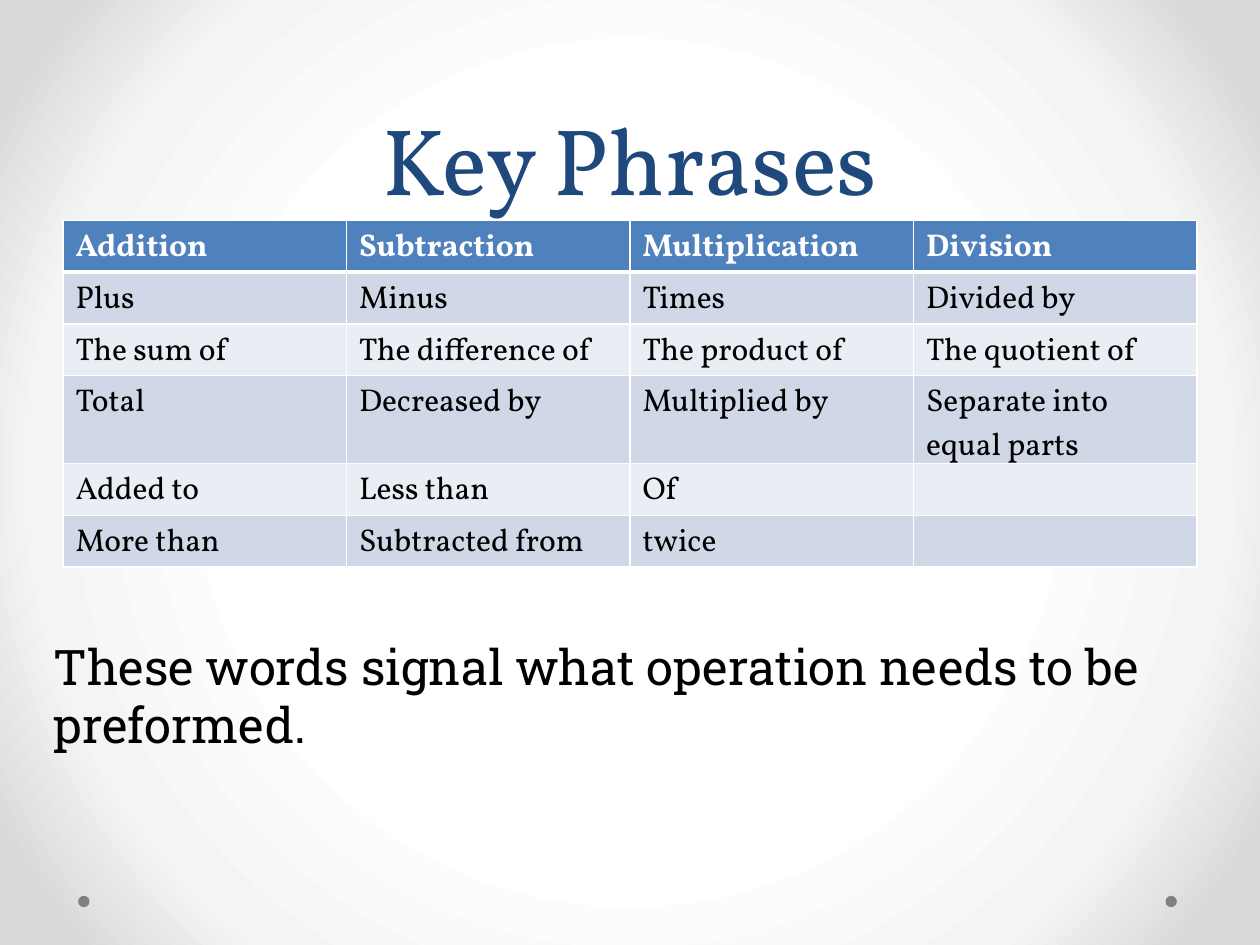
from pptx import Presentation
from pptx.dml.color import RGBColor
from pptx.enum.shapes import MSO_SHAPE
from pptx.enum.text import MSO_ANCHOR, PP_ALIGN
from pptx.oxml import parse_xml
from pptx.oxml.ns import nsdecls
from pptx.util import Inches, Pt

OVAL = MSO_SHAPE.OVAL
BOTTOM, TOP = MSO_ANCHOR.BOTTOM, MSO_ANCHOR.TOP
LEFT, CENTER = PP_ALIGN.LEFT, PP_ALIGN.CENTER

NAVY = RGBColor(0x1F, 0x49, 0x7D)
BLUE = RGBColor(0x4F, 0x81, 0xBD)
BANDS = RGBColor(0xD0, 0xD8, 0xE8), RGBColor(0xE9, 0xED, 0xF4)
WHITE = RGBColor(0xFF, 0xFF, 0xFF)
BLACK = RGBColor(0, 0, 0)
GRAY = RGBColor(0x80, 0x80, 0x80)

SERIF, SLAB = "Vollkorn", "Roboto Slab"

# Content
TITLE = "Key Phrases"
NOTE = "These words signal what operation needs to be preformed."
ROWS = [
    ("Addition", "Subtraction", "Multiplication", "Division"),
    ("Plus", "Minus", "Times", "Divided by"),
    ("The sum of", "The difference of", "The product of", "The quotient of"),
    ("Total", "Decreased by", "Multiplied by", "Separate into equal parts"),
    ("Added to", "Less than", "Of", ""),
    ("More than", "Subtracted from", "twice", ""),
]
STOPS = [(50, WHITE), (76, RGBColor(0xF4, 0xF4, 0xF4)),
         (92, RGBColor(0xDA, 0xDA, 0xDA))]
DOTS = (0.62, 9.25)
COL_W, ROW_H = 2.25, 0.455


def set_font(par, name, size, color, bold=False):
    font = par.font
    font.name, font.size, font.bold = name, Pt(size), bold
    font.color.rgb = color


def add_text(slide, text, box, name, size, color, anchor=TOP, align=LEFT):
    frame = slide.shapes.add_textbox(*map(Inches, box)).text_frame
    frame.word_wrap = True
    frame.vertical_anchor = anchor
    par = frame.paragraphs[0]
    par.text, par.alignment = text, align
    set_font(par, name, size, color)
    return par


def add_edge(cell, side, width):
    cell._tc.get_or_add_tcPr().append(parse_xml(
        f'<a:ln{side} {nsdecls("a")} w="{Pt(width)}"><a:solidFill>'
        f'<a:srgbClr val="{WHITE}"/></a:solidFill></a:ln{side}>'))


def add_glow(slide):
    stops = "".join(
        f'<a:gs pos="{pos * 1000}"><a:srgbClr val="{color}"/></a:gs>'
        for pos, color in STOPS)
    slide.element.cSld.insert(0, parse_xml(
        f'<p:bg {nsdecls("p", "a")}><p:bgPr><a:gradFill rotWithShape="1">'
        f'<a:gsLst>{stops}</a:gsLst><a:path path="circle">'
        '<a:fillToRect l="50000" t="50000" r="50000" b="50000"/></a:path>'
        '</a:gradFill><a:effectLst/></p:bgPr></p:bg>'))


def add_grid(slide):
    rows, cols = len(ROWS), len(ROWS[0])
    table = slide.shapes.add_table(
        rows, cols, Inches(0.5), Inches(1.75),
        Inches(cols * COL_W), Inches(rows * 0.41)).table
    for r, words in enumerate(ROWS):
        table.rows[r].height = Inches(0.41)
        head = r == 0
        for c, word in enumerate(words):
            cell = table.cell(r, c)
            # The rule under the header is thicker than the rest
            for side in "LRTB":
                thick = (r, side) in ((0, "B"), (1, "T"))
                add_edge(cell, side, 3 if thick else 1)
            cell.fill.solid()
            cell.fill.fore_color.rgb = BLUE if head else BANDS[(r - 1) % 2]
            par = cell.text_frame.paragraphs[0]
            par.text = word
            set_font(par, SERIF, 18, WHITE if head else BLACK, head)


def main():
    deck = Presentation()
    deck.slide_width, deck.slide_height = Inches(10), Inches(7.5)
    slide = deck.slides.add_slide(deck.slide_layouts[6])
    add_glow(slide)

    # Corner dots
    for left in DOTS:
        dot = slide.shapes.add_shape(
            OVAL, Inches(left), Inches(7.11), Inches(0.09), Inches(0.09))
        dot.shadow.inherit = False
        dot.fill.solid()
        dot.fill.fore_color.rgb = GRAY
        dot.line.fill.background()

    # Title, table and note
    title = add_text(slide, TITLE, (0.5, 0, 9, 1.75), SERIF, 54, NAVY,
                     BOTTOM, CENTER)
    title.line_spacing = Pt(58)
    add_grid(slide)
    add_text(slide, NOTE, (0.33, 5, 9.42, 1.04), SLAB, 28, BLACK)

    deck.save("out.pptx")


if __name__ == "__main__":
    main()
